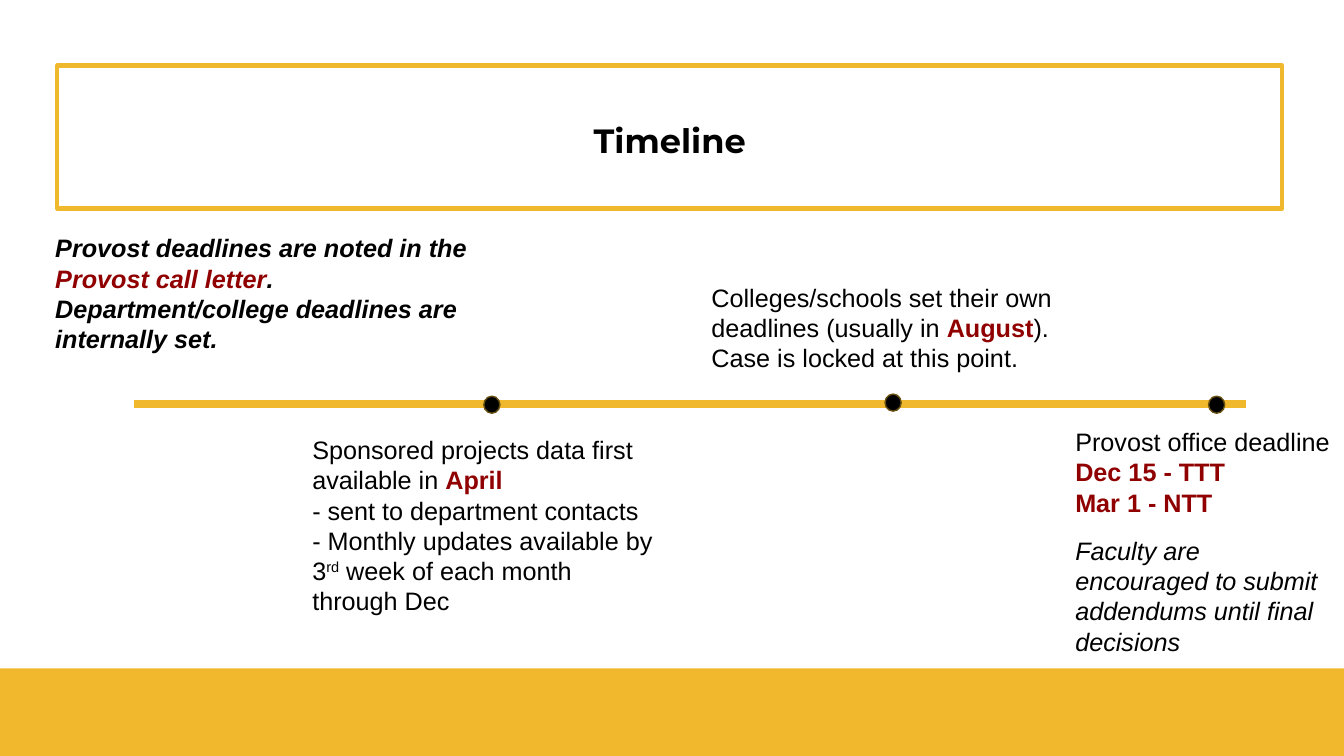
from lxml.etree import SubElement
from pptx import Presentation
from pptx.dml.color import RGBColor
from pptx.enum.shapes import MSO_CONNECTOR, MSO_SHAPE
from pptx.enum.text import MSO_ANCHOR, PP_ALIGN
from pptx.oxml.ns import qn
from pptx.util import Pt

BLACK = RGBColor(0x00, 0x00, 0x00)
WHITE = RGBColor(0xFF, 0xFF, 0xFF)
DARK_RED = RGBColor(0x90, 0x00, 0x00)
BAND_GOLD = RGBColor(0xF1, 0xB8, 0x2D)
LINE_GOLD = RGBColor(0xF0, 0xB8, 0x2C)
DOT_EDGE = RGBColor(0x69, 0x51, 0x13)

DOT_WIDTH, DOT_HEIGHT = 11.5, 12.2
AXIS_Y = 288.7
DOTS = [(345.6, 283), (632.2, 281.5), (863.3, 283)]

RED = {"color": DARK_RED}
BOLD_RED = {"color": DARK_RED, "bold": True}

# Each note: left, top, width, height, format of the whole note, paragraphs of (text, format) spans
NOTES = [
    (501.1, 198, 272.9, 72.7, {}, [
        [("Colleges/schools set their own deadlines (usually in ", {}),
         ("August", BOLD_RED),
         ("). Case is locked at this point.", {})],
    ]),
    (216, 306.7, 264.2, 138.2, {}, [
        [("Sponsored projects data first available in ", {}), ("April", BOLD_RED)],
        [("- sent to department contacts", {})],
        [("- Monthly updates available by 3", {}),
         ("rd", {"baseline": 30}),
         (" week of each month through Dec", {})],
    ]),
    (761, 301, 205.2, 72.7, {}, [
        [("Provost office deadline", {})],
        [("Dec 15 - TTT", BOLD_RED)],
        [("Mar 1 - NTT", BOLD_RED)],
    ]),
    (761, 378.7, 199.4, 94.3, {"italic": True}, [
        [("Faculty are encouraged to submit addendums until final decisions", {})],
    ]),
    (32.4, 162.7, 319, 94.3, {"bold": True, "italic": True}, [
        [("Provost deadlines are noted in the ", {}),
         ("Provost call letter", RED),
         (". Department/college deadlines are internally set.", {})],
    ]),
]


def add_span(para, text, font="Arial", size=18, color=BLACK, bold=False, italic=False, baseline=0):
    """Append a run; baseline is the superscript rise in percent."""
    span = para.add_run()
    span.text = text
    span.font.name = font
    span.font.size = Pt(size)
    span.font.color.rgb = color
    span.font.bold = bold
    span.font.italic = italic
    if baseline:
        span._r.get_or_add_rPr().set("baseline", str(baseline * 1000))


def add_shape(page, kind, left, top, width, height, fill, line=None, line_width=1):
    shape = page.shapes.add_shape(kind, Pt(left), Pt(top), Pt(width), Pt(height))
    shape.shadow.inherit = False
    shape.fill.solid()
    shape.fill.fore_color.rgb = fill
    if line is None:
        shape.line.fill.background()
    else:
        shape.line.color.rgb = line
        shape.line.width = Pt(line_width)
    return shape


def add_title(page, text):
    shape = add_shape(page, MSO_SHAPE.RECTANGLE, 41, 46.8, 874.8, 102.2, WHITE, LINE_GOLD, 3)
    color = shape.fill._xPr.find(qn("a:solidFill"))[0]
    SubElement(color, qn("a:alpha")).set("val", "36000")
    frame = shape.text_frame
    frame.word_wrap = False
    frame.vertical_anchor = MSO_ANCHOR.MIDDLE
    frame.margin_left = frame.margin_right = Pt(21.6)
    frame.margin_top, frame.margin_bottom = Pt(14.4), Pt(7.2)
    para = frame.paragraphs[0]
    para.alignment = PP_ALIGN.CENTER
    para.line_spacing = 0.9
    add_span(para, text, font="Montserrat", size=24, bold=True)


def add_axis(page):
    axis = page.shapes.add_connector(
        MSO_CONNECTOR.STRAIGHT, Pt(95.8), Pt(AXIS_Y), Pt(890), Pt(AXIS_Y))
    axis.line.color.rgb = LINE_GOLD
    axis.line.width = Pt(6)
    SubElement(axis._element.spPr, qn("a:effectLst"))


def add_note(page, left, top, width, height, style, paragraphs):
    box = page.shapes.add_textbox(Pt(left), Pt(top), Pt(width), Pt(height))
    frame = box.text_frame
    frame.word_wrap = True
    for index, spans in enumerate(paragraphs):
        para = frame.add_paragraph() if index else frame.paragraphs[0]
        for text, span_style in spans:
            add_span(para, text, **{**style, **span_style})


def main():
    deck = Presentation()
    deck.slide_width, deck.slide_height = Pt(960), Pt(540)
    page = deck.slides.add_slide(deck.slide_layouts[6])
    add_shape(page, MSO_SHAPE.RECTANGLE, 0, 477.4, 960, 62.6, BAND_GOLD)
    add_title(page, "Timeline")
    add_axis(page)
    for left, top in DOTS:
        add_shape(page, MSO_SHAPE.OVAL, left, top, DOT_WIDTH, DOT_HEIGHT, BLACK, DOT_EDGE)
    for note in NOTES:
        add_note(page, *note)
    deck.save("out.pptx")


if __name__ == "__main__":
    main()
